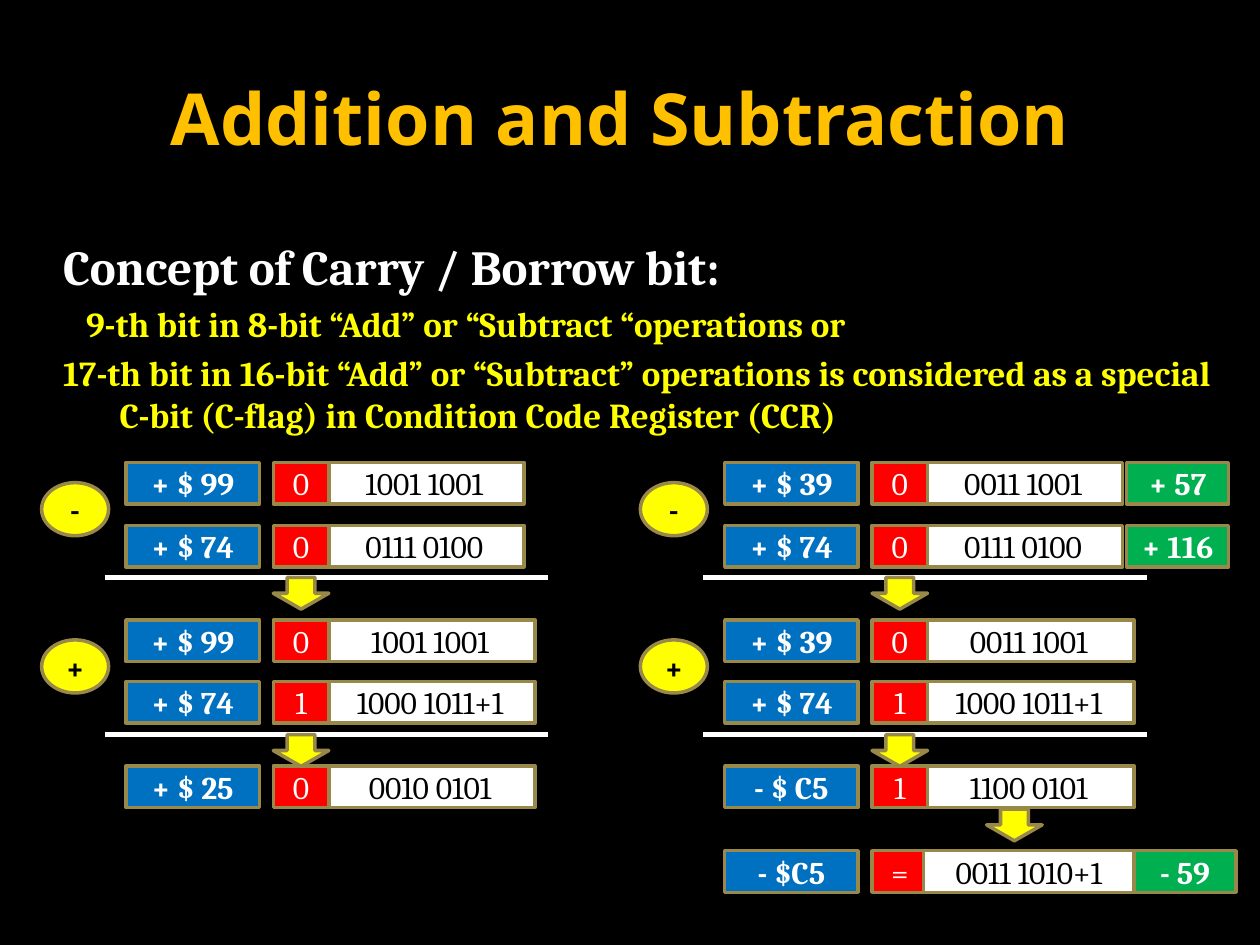
import pptx
import pptx.util
import pptx.dml.color
import pptx.enum.shapes
import pptx.enum.text
from lxml import etree

Cm = pptx.util.Cm
Pt = pptx.util.Pt
Kind = pptx.enum.shapes.MSO_SHAPE
Align = pptx.enum.text.PP_ALIGN
NS = "{http://schemas.openxmlformats.org/drawingml/2006/main}"

BLACK, WHITE, YELLOW = "000000", "FFFFFF", "FFFF00"
RED, BLUE, GREEN, GOLD = "FF0000", "0070C0", "00B050", "FFC000"
EDGE = "98894B"


def color(text):
    return pptx.dml.color.RGBColor.from_string(text)


class Board:
    font = "Cambria"
    size = 18
    high = 0.84

    def __init__(self, deck):
        self.slide = deck.slides.add_slide(deck.slide_layouts[1])
        fill = self.slide.background.fill
        fill.solid()
        fill.fore_color.rgb = color(BLACK)

    def style(self, par, size, tint, bold, font=None):
        for run in par.runs:
            run.font.name = font or self.font
            run.font.size = Pt(size)
            run.font.bold = bold
            run.font.color.rgb = color(tint)

    def place(self, item, left, top, wide, high):
        item.left, item.top = Cm(left), Cm(top)
        item.width, item.height = Cm(wide), Cm(high)
        item.text_frame.auto_size = pptx.enum.text.MSO_AUTO_SIZE.NONE

    def title(self, text):
        item = self.slide.shapes.title
        self.place(item, 1.27, 0.76, 22.86, 3.18)
        item.text_frame.text = text
        par = item.text_frame.paragraphs[0]
        par.alignment = Align.CENTER
        self.style(par, 41, GOLD, True, "Open Sans")

    def body(self, lines):
        item = self.slide.placeholders[1]
        self.place(item, 0.64, 4.65, 24.13, 13.97)
        frame = item.text_frame
        frame.text = "\n".join(line[0] for line in lines)
        for par, (text, size, tint, indent) in zip(frame.paragraphs, lines):
            self.style(par, size, tint, True)
            props = par._p.get_or_add_pPr()
            props.set("marL", str(Cm(1.52)))
            props.set("indent", str(Cm(indent)))
            etree.SubElement(props, NS + "buNone")

    def shape(self, kind, left, top, wide, high, fill, text="", tint=WHITE, bold=False):
        item = self.slide.shapes.add_shape(kind, Cm(left), Cm(top), Cm(wide), Cm(high))
        item.shadow.inherit = False
        item.fill.solid()
        item.fill.fore_color.rgb = color(fill)
        item.line.color.rgb = color(EDGE)
        item.line.width = Pt(2)
        if text:
            item.text_frame.text = text
            par = item.text_frame.paragraphs[0]
            par.alignment = Align.CENTER
            self.style(par, self.size, tint, bold)

    def box(self, left, top, wide, fill, text, tint=WHITE, bold=False):
        self.shape(Kind.RECTANGLE, left, top, wide, self.high, fill, text, tint, bold)

    def row(self, left, top, wide, value, bit, byte):
        self.box(left + 6.55, top, wide, WHITE, byte, BLACK)
        self.box(left + 5.51, top, 1.12, RED, bit)
        self.box(left + 2.54, top, 2.69, BLUE, value, bold=True)

    def sign(self, left, top, text):
        self.shape(Kind.OVAL, left + 0.84, top, 1.35, 1.07, YELLOW, text, BLACK, True)

    def arrow(self, left, top):
        self.shape(Kind.DOWN_ARROW, left, top, 1.12, 0.64, YELLOW)

    def rule(self, left, top):
        line = self.slide.shapes.add_connector(
            pptx.enum.shapes.MSO_CONNECTOR.STRAIGHT,
            Cm(left + 2.11), Cm(top), Cm(left + 11.05), Cm(top))
        line.line.color.rgb = color(WHITE)
        line.line.width = Pt(3)
        etree.SubElement(line._element.spPr, NS + "effectLst")

    def panel(self, left, rows):
        tops = (9.32, 10.59, 12.5, 13.74, 15.44)
        for num, (top, cells) in enumerate(zip(tops, rows)):
            self.row(left, top, 4.01 if num < 2 else 4.24, *cells)
        for mark, top, base in (("-", 9.73, 11.64), ("+", 12.9, 14.81)):
            self.sign(left, top, mark)
            self.rule(left, base)
            self.arrow(left + 5.51, base)


def main():
    deck = pptx.Presentation()
    deck.slide_width, deck.slide_height = Cm(25.4), Cm(19.05)
    board = Board(deck)
    board.title("Addition and Subtraction ")
    board.body([
        ("Concept of Carry / Borrow bit:", 28, WHITE, -1.14),
        ("9-th bit in 8-bit “Add” or “Subtract “operations or", 20, YELLOW, -0.68),
        ("17-th bit in 16-bit “Add” or “Subtract” operations is considered "
         "as a special C-bit (C-flag) in Condition Code Register (CCR)", 20, YELLOW, -1.14),
    ])
    take = [("+ $ 74", "0", "0111 0100"), ("+ $ 74", "1", "1000 1011+1")]
    sums = [
        (("+ $ 99", "0", "1001 1001"), ("+ $ 25", "0", "0010 0101")),
        (("+ $ 39", "0", "0011 1001"), ("- $ C5", "1", "1100 0101")),
    ]
    step = 12.07
    for num, (first, last) in enumerate(sums):
        board.panel(num * step, [first, take[0], first, take[1], last])

    board.arrow(19.89, 16.31)
    board.box(step + 2.54, 17.15, 2.69, BLUE, "- $C5", bold=True)
    board.box(step + 5.51, 17.15, 1.12, RED, "=")
    board.box(step + 6.55, 17.15, 4.24, WHITE, "0011 1010+1", BLACK)
    for left, top, text in ((22.71, 9.32, "+ 57"), (22.71, 10.59, "+ 116"), (22.86, 17.15, "- 59")):
        board.box(left, top, 2.06, GREEN, text, bold=True)
    deck.save("out.pptx")


if __name__ == "__main__":
    main()
